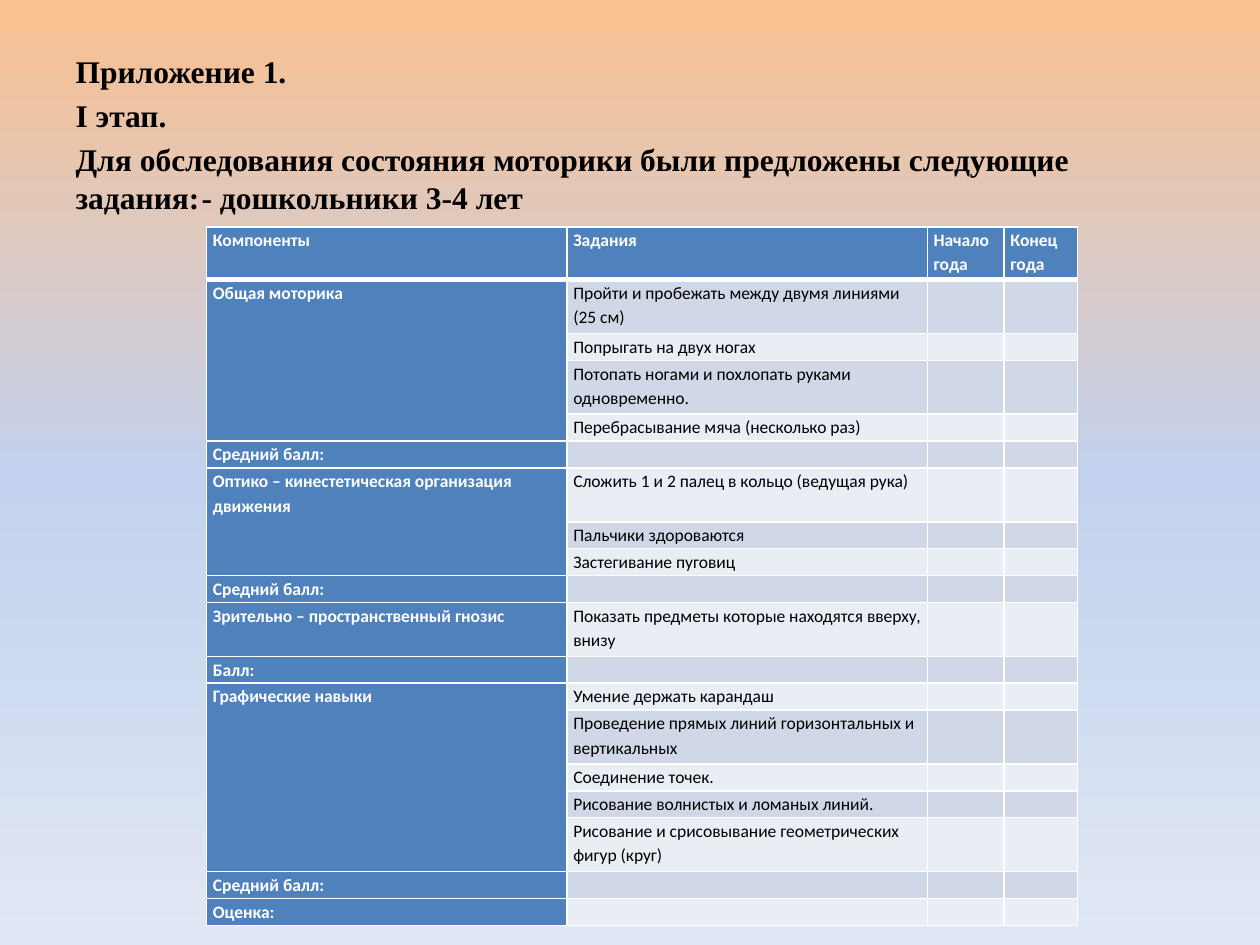
from copy import deepcopy
from dataclasses import dataclass

from lxml.etree import SubElement
from pptx import Presentation
from pptx.dml.color import RGBColor
from pptx.oxml import parse_xml
from pptx.oxml.ns import nsdecls, qn
from pptx.util import Inches, Pt

COLORS = {
    "sky_top": "FAC090",
    "sky_middle": "C2D1ED",
    "sky_bottom": "E1E8F5",
    "accent": "4F81BD",
    "band_dark": "D0D8E8",
    "band_light": "E9EDF4",
    "white": "FFFFFF",
    "black": "000000",
}
INTRO = [
    "Приложение 1.",
    "I этап.",
    "Для обследования состояния моторики были предложены следующие задания:\t- дошкольники 3-4 лет",
]
HEADINGS = ["Компоненты", "Задания", "Начало года", "Конец года"]
COLUMN_WIDTHS = [2.86, 2.86, 0.61, 0.58]
TABLE_HEIGHT = 5.55
HEADER_HEIGHT = 0.42
LINE_CAPACITY = 40


@dataclass
class Section:
    component: str
    tasks: list[str]
    summary: str


@dataclass
class Row:
    texts: list[str]
    lines: int


SECTIONS = [
    Section("Общая моторика", [
        "Пройти и пробежать между двумя линиями (25 см)",
        "Попрыгать на двух ногах",
        "Потопать ногами и похлопать руками одновременно.",
        "Перебрасывание мяча (несколько раз)",
    ], "Средний балл:"),
    Section("Оптико – кинестетическая организация движения", [
        "Сложить 1 и 2 палец в кольцо (ведущая рука)",
        "Пальчики здороваются",
        "Застегивание пуговиц",
    ], "Средний балл:"),
    Section("Зрительно – пространственный гнозис", [
        "Показать предметы которые находятся вверху, внизу",
    ], "Балл:"),
    Section("Графические навыки", [
        "Умение держать карандаш",
        "Проведение прямых линий горизонтальных и вертикальных",
        "Соединение точек.",
        "Рисование волнистых и ломаных линий.",
        "Рисование и срисовывание геометрических фигур (круг)",
    ], "Средний балл:"),
]


def color(name: str) -> RGBColor:
    return RGBColor.from_string(COLORS[name])


def paint_background(page) -> None:
    fill = page.background.fill
    fill.gradient()
    fill.gradient_angle = 270
    stop_list = page._element.find(".//" + qn("a:gsLst"))
    stop_list.append(deepcopy(stop_list[0]))
    names = ["sky_top", "sky_middle", "sky_bottom"]
    for index, (stop, name) in enumerate(zip(fill.gradient_stops, names)):
        stop.position = index / 2
        stop.color.rgb = color(name)


def format_font(paragraph, family: str, size: int, name: str, bold: bool) -> None:
    font = paragraph.font
    font.name = family
    font.size = Pt(size)
    font.bold = bold
    font.color.rgb = color(name)


def write_intro(page) -> None:
    page.shapes.title._element.getparent().remove(page.shapes.title._element)
    body = page.placeholders[1]
    body.left, body.top = Inches(0.5), Inches(0.36)
    body.width, body.height = Inches(9), Inches(6.34)
    frame = body.text_frame
    for index, text in enumerate(INTRO):
        paragraph = frame.paragraphs[0] if index == 0 else frame.add_paragraph()
        paragraph.text = text
        paragraph.space_before = Pt(3.6 if index else 0)
        properties = paragraph._p.get_or_add_pPr()
        properties.set("marL", "0")
        properties.set("indent", "0")
        SubElement(properties, qn("a:buNone"))
        if "\t" in text:
            tabs = SubElement(properties, qn("a:tabLst"))
            SubElement(tabs, qn("a:tab"), pos=str(Inches(1.17)), algn="l")
        format_font(paragraph, "Times New Roman", 18, "black", True)


def draw_borders(cell, top: int, bottom: int) -> None:
    properties = cell._tc.get_or_add_tcPr()
    widths = {"lnL": 1, "lnR": 1, "lnT": top, "lnB": bottom}
    for index, (side, width) in enumerate(widths.items()):
        properties.insert(index, parse_xml(
            f'<a:{side} {nsdecls("a")} w="{Pt(width)}"><a:solidFill>'
            f'<a:srgbClr val="{COLORS["white"]}"/></a:solidFill></a:{side}>'))


def fill_cell(cell, text: str, row: int, column: int) -> None:
    strong = row == 0 or column == 0
    band = "band_dark" if row % 2 else "band_light"
    cell.margin_left = cell.margin_right = Inches(0.05)
    cell.margin_top = cell.margin_bottom = 0
    cell.fill.solid()
    cell.fill.fore_color.rgb = color("accent" if strong else band)
    draw_borders(cell, top=3 if row == 1 else 1, bottom=3 if row == 0 else 1)
    paragraph = cell.text_frame.paragraphs[0]
    paragraph.line_spacing = 1.15
    if text:
        paragraph.text = text
    format_font(paragraph, "Calibri", 10, "white" if strong else "black", strong)
    if not text:
        SubElement(paragraph._p, qn("a:endParaRPr"), sz="1000")


def table_rows() -> list[Row]:
    rows = [Row(HEADINGS, 2)]
    for section in SECTIONS:
        for index, task in enumerate(section.tasks):
            component = section.component if index == 0 else ""
            rows.append(Row([component, task, "", ""], 2 if len(task) > LINE_CAPACITY else 1))
        rows.append(Row([section.summary, "", "", ""], 1))
    rows.append(Row(["Оценка:", "", "", ""], 1))
    return rows


def draw_table(page) -> None:
    rows = table_rows()
    table = page.shapes.add_table(
        len(rows), len(HEADINGS), Inches(1.64), Inches(1.8),
        Inches(sum(COLUMN_WIDTHS)), Inches(TABLE_HEIGHT)).table
    table.first_row = table.horz_banding = False
    for column, width in zip(table.columns, COLUMN_WIDTHS):
        column.width = Inches(width)
    line_height = (TABLE_HEIGHT - HEADER_HEIGHT) / sum(row.lines for row in rows[1:])
    for row_index, row in enumerate(rows):
        height = line_height * row.lines if row_index else HEADER_HEIGHT
        table.rows[row_index].height = Inches(height)
        for column_index, text in enumerate(row.texts):
            fill_cell(table.cell(row_index, column_index), text, row_index, column_index)
    first = 1
    for section in SECTIONS:
        last = first + len(section.tasks) - 1
        if last > first:
            table.cell(first, 0).merge(table.cell(last, 0))
        first = last + 2


def main() -> None:
    deck = Presentation()
    deck.slide_width, deck.slide_height = Inches(10), Inches(7.5)
    page = deck.slides.add_slide(deck.slide_layouts[1])
    paint_background(page)
    write_intro(page)
    draw_table(page)
    deck.save("out.pptx")


if __name__ == "__main__":
    main()
